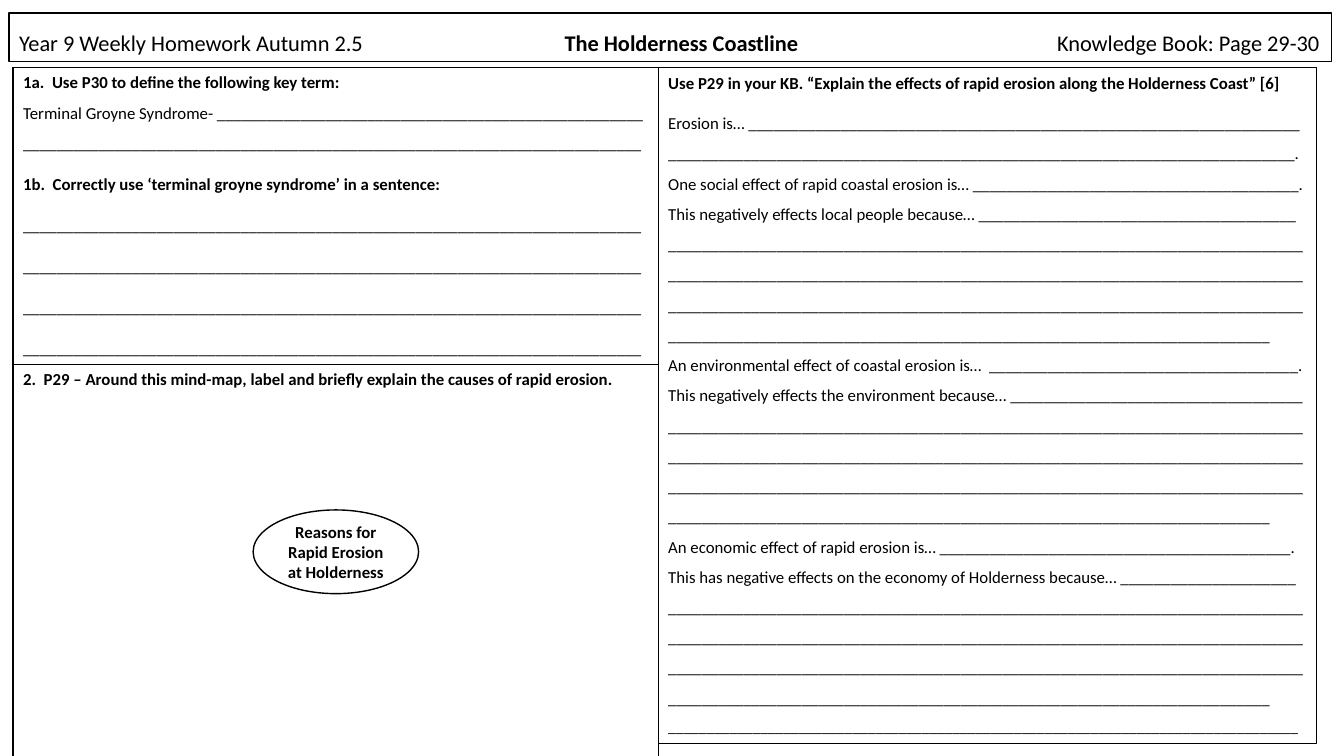
from lxml import etree
from pptx import Presentation
from pptx.dml.color import RGBColor
from pptx.enum.shapes import MSO_SHAPE
from pptx.enum.text import MSO_ANCHOR, MSO_AUTO_SIZE, PP_ALIGN
from pptx.oxml.ns import qn
from pptx.util import Cm, Pt

RECTANGLE, OVAL = MSO_SHAPE.RECTANGLE, MSO_SHAPE.OVAL
TOP, MIDDLE, BOTTOM = MSO_ANCHOR.TOP, MSO_ANCHOR.MIDDLE, MSO_ANCHOR.BOTTOM
LEFT, CENTER = PP_ALIGN.LEFT, PP_ALIGN.CENTER
NO_AUTOFIT = MSO_AUTO_SIZE.NONE

BLACK, WHITE = "000000", "FFFFFF"
FONT = "Calibri"
SECTION_GAP = Pt(14.5)


def color(hex_value):
    return RGBColor.from_string(hex_value)


def blanks(count):
    return "_" * count


def add_span(para, text, size=12, bold=False):
    span = para.add_run()
    span.text = text
    for name, value in {"name": FONT, "size": Pt(size), "bold": bold}.items():
        setattr(span.font, name, value)
    span.font.color.rgb = color(BLACK)


def write_paragraphs(frame, rows):
    """Each row holds its text, span format and paragraph format."""
    for index, (text, span_format, para_format) in enumerate(rows):
        para = frame.add_paragraph() if index else frame.paragraphs[0]
        for name, value in {"alignment": LEFT, **para_format}.items():
            setattr(para, name, value)
        add_span(para, text, **span_format)


def style_box(box, anchor, width, fill=None):
    box.line.color.rgb = color(BLACK)
    box.line.width = Pt(width)
    if fill:
        box.fill.solid()
        box.fill.fore_color.rgb = color(fill)
    else:
        box.fill.background()
    frame = box.text_frame
    frame_format = {"word_wrap": True, "auto_size": NO_AUTOFIT,
                    "vertical_anchor": anchor}
    for name, value in frame_format.items():
        setattr(frame, name, value)
    return frame


def add_panel(page, kind, area, anchor, width, fill=None):
    box = page.shapes.add_shape(kind, *map(Cm, area))
    box.shadow.inherit = False
    return style_box(box, anchor, width, fill)


def add_header(page, area):
    box = page.shapes.title
    box.left, box.top, box.width, box.height = map(Cm, area)
    para = style_box(box, BOTTOM, 1, WHITE).paragraphs[0]
    para.alignment, para.line_spacing = LEFT, 0.9

    # Tab stops for the centred title and the page reference at the right
    stops = etree.SubElement(para._p.get_or_add_pPr(), qn("a:tabLst"))
    for position, align in ((area[2] / 2 + 0.03, "ctr"), (area[2] - 0.55, "r")):
        etree.SubElement(stops, qn("a:tab"), pos=str(Cm(position)), algn=align)

    add_span(para, "Year 9 Weekly Homework Autumn 2.5\t", 16)
    add_span(para, "The Holderness Coastline", 16, True)
    add_span(para, "\tKnowledge Book: Page 29-30", 16)


def add_borders(cell):
    properties = cell._tc.get_or_add_tcPr()
    for index, side in enumerate(("lnL", "lnR", "lnT", "lnB")):
        border = etree.Element(qn(f"a:{side}"), w=str(Pt(1)))
        fill = etree.SubElement(border, qn("a:solidFill"))
        etree.SubElement(fill, qn("a:srgbClr"), val=BLACK)
        properties.insert(index, border)


def add_tasks(page, area, heights):
    left, top, width = area
    table = page.shapes.add_table(len(heights), 1, Cm(left), Cm(top), Cm(width),
                                  Cm(sum(heights))).table
    table.first_row = table.horz_banding = False
    bold = {"bold": True}
    tasks = [
        [("1a.  Use P30 to define the following key term:", bold, {}),
         (f"Terminal Groyne Syndrome- {blanks(51)} {blanks(74)}", {},
          {"line_spacing": 1.5}),
         ("1b.  Correctly use ‘terminal groyne syndrome’ in a sentence:", bold,
          {"space_before": SECTION_GAP}),
         (blanks(4 * 74), {}, {"line_spacing": 2.0})],
        [("2.  P29 – Around this mind-map, label and briefly explain the causes "
          "of rapid erosion.", bold, {})],
    ]
    for row, height, rows in zip(table.rows, heights, tasks):
        row.height = Cm(height)
        cell = row.cells[0]
        cell.fill.background()
        add_borders(cell)
        write_paragraphs(cell.text_frame, rows)


def add_mind_map(page, area):
    frame = add_panel(page, OVAL, area, MIDDLE, 1, WHITE)
    frame.margin_left = frame.margin_right = Cm(0.2)
    write_paragraphs(frame, [("Reasons for Rapid Erosion at Holderness",
                              {"bold": True}, {"alignment": CENTER})])


def add_exam_question(page, area):
    frame = add_panel(page, RECTANGLE, area, TOP, 0.75)
    long_answer = blanks(300)
    answers = [
        f"{blanks(75)}.",
        f"One social effect of rapid coastal erosion is… {blanks(39)}.",
        f"This negatively effects local people because… {blanks(38)}",
        long_answer,
        f"An environmental effect of coastal erosion is…  {blanks(37)}.",
        f"This negatively effects the environment because… {blanks(35)}",
        long_answer,
        f"An economic effect of rapid erosion is… {blanks(42)}.",
        "This has negative effects on the economy of Holderness because… "
        f"{blanks(21)}",
        long_answer,
    ]
    spaced = {"line_spacing": 1.5}
    write_paragraphs(frame, [
        ("Use P29 in your KB. “Explain the effects of rapid erosion along the "
         "Holderness Coast” [6]", {"bold": True}, {}),
        (f"Erosion is… {blanks(66)}", {}, {"space_before": SECTION_GAP}),
        *((text, {}, spaced) for text in answers),
        (blanks(82), {"size": 11}, spaced),
    ])


def main():
    deck = Presentation()
    deck.slide_width, deck.slide_height = Cm(33.87), Cm(19.05)
    page = deck.slides.add_slide(deck.slide_layouts.get_by_name("Title Only"))
    add_header(page, (0.23, 0.33, 33.32, 1.22))
    add_tasks(page, (0.33, 1.7, 16.26), (7.47, 9.9))
    add_exam_question(page, (16.59, 1.7, 16.59, 17.04))
    add_mind_map(page, (6.38, 12.85, 4.17, 2.11))
    deck.save("out.pptx")


if __name__ == "__main__":
    main()
